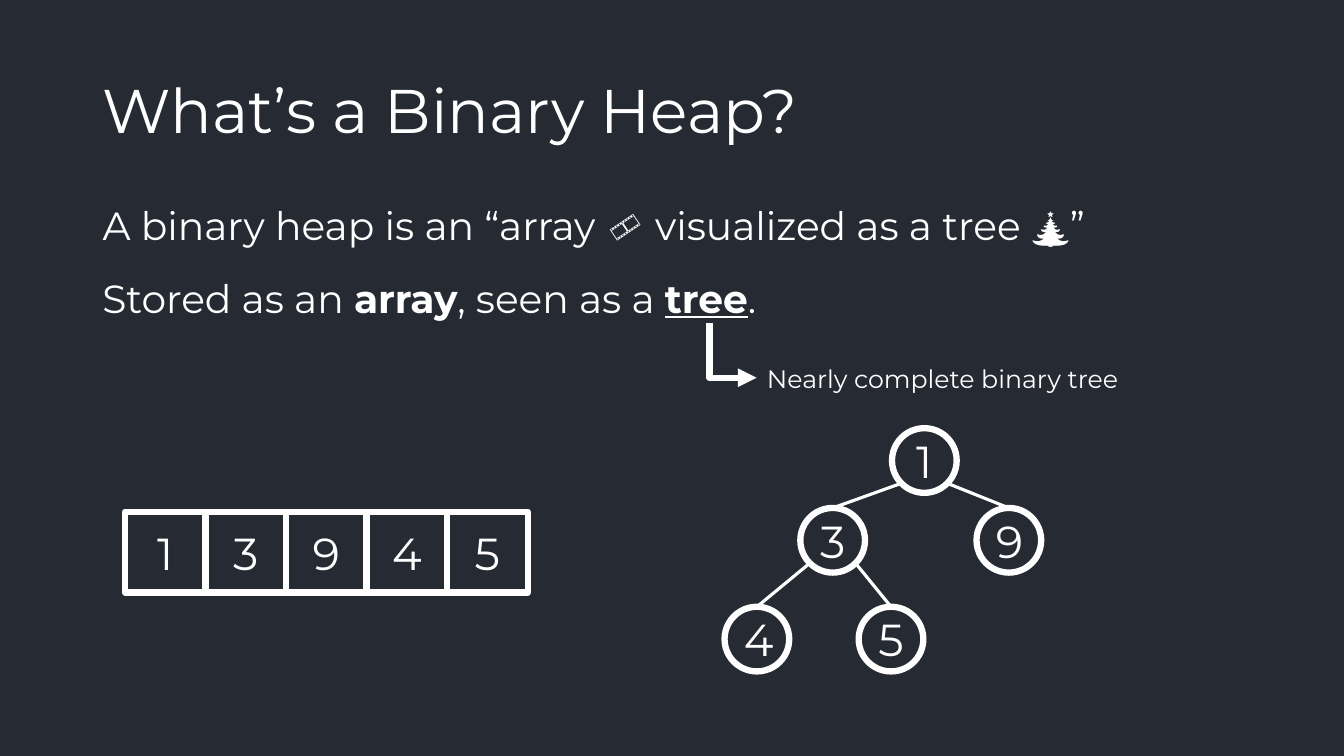
from lxml.etree import SubElement
from pptx import Presentation
from pptx.dml.color import RGBColor
from pptx.enum.shapes import MSO_CONNECTOR as Link, MSO_SHAPE as Form
from pptx.enum.text import MSO_ANCHOR as Anchor, MSO_AUTO_SIZE as Fit, PP_ALIGN as Align
from pptx.oxml.ns import qn
from pptx.util import Cm, Pt

FONT = "Montserrat"
WHITE = "FFFFFF"
DARK = "262A33"
HEAP = [1, 3, 9, 4, 5]
# Left and top of each tree node, in heap order
SPOTS = [(22.48, 10.79), (20.17, 12.8), (24.61, 12.8), (18.26, 15.29), (21.64, 15.29)]
NODE = 1.63
CELL = 2.03


def color(code):
    return RGBColor.from_string(code)


def place(shape, left, top, width, height):
    shape.left, shape.top = Cm(left), Cm(top)
    shape.width, shape.height = Cm(width), Cm(height)


def style(run, size, bold=False, under=False):
    font = run.font
    font.name, font.size = FONT, Pt(size)
    font.bold, font.underline = bold, under
    font.color.rgb = color(WHITE)


def write(shape, parts, size, anchor=Anchor.TOP, align=Align.LEFT, gap=0, lead=1.0):
    """Fill a shape with one paragraph of (text, bold, underline) parts."""
    frame = shape.text_frame
    frame.word_wrap = True
    frame.auto_size = Fit.NONE
    frame.vertical_anchor = anchor
    para = frame.paragraphs[0]
    para.alignment = align
    para.line_spacing, para.space_before = lead, Pt(gap)
    for text, bold, under in parts:
        run = para.add_run()
        run.text = text
        style(run, size, bold, under)
    return para


def plain(text):
    return [(text, False, False)]


def label(slide, box, parts, size, **look):
    shape = slide.shapes.add_textbox(*map(Cm, box))
    write(shape, parts, size, **look)
    return shape


def digit(slide, form, left, top, side, value):
    """Draw one outlined cell or node with its number."""
    shape = slide.shapes.add_shape(form, Cm(left), Cm(top), Cm(side), Cm(side))
    shape.shadow.inherit = False
    shape.fill.background()
    shape.line.color.rgb = color(WHITE)
    shape.line.width = Pt(4.5)
    write(shape, plain(str(value)), 32, Anchor.MIDDLE, Align.CENTER)


def link(slide, kind, start, end, width):
    line = slide.shapes.add_connector(kind, *map(Cm, (*start, *end)))
    line.line.color.rgb = color(WHITE)
    line.line.width = Pt(width)
    SubElement(line._element.spPr, qn("a:effectLst"))
    return line


def arrow(slide):
    """Draw the arrow that goes down from the word and then right."""
    line = link(slide, Link.ELBOW, (19.16, 8.24), (17.79, 9.43), 4.5)
    props = line._element.spPr
    props.find(qn("a:xfrm")).set("rot", "16200000")
    bend = props.find(qn("a:prstGeom")).find(qn("a:avLst"))
    SubElement(bend, qn("a:gd"), name="adj1", fmla="val 100000")
    SubElement(props.find(qn("a:ln")), qn("a:tailEnd"), type="triangle")


def array(slide):
    for i, value in enumerate(HEAP):
        digit(slide, Form.RECTANGLE, 3.15 + i * CELL, 12.9, CELL, value)


def tree(slide):
    for (left, top), value in zip(SPOTS, HEAP):
        digit(slide, Form.OVAL, left, top, NODE, value)
    low = NODE * 0.85
    for i, (left, top) in enumerate(SPOTS[1:], 1):
        x, y = SPOTS[(i - 1) // 2]
        side = NODE - low if i % 2 else low
        link(slide, Link.STRAIGHT, (x + side, y + low), (left + NODE / 2, top), 2.25)


def main():
    deck = Presentation()
    deck.slide_width, deck.slide_height = Cm(33.87), Cm(19.05)
    slide = deck.slides.add_slide(deck.slide_layouts[1])
    back = slide.background.fill
    back.solid()
    back.fore_color.rgb = color(DARK)

    title, body = slide.placeholders
    place(title, 2.33, 1.02, 29.21, 3.68)
    write(title, plain("What’s a Binary Heap?"), 44, Anchor.MIDDLE, lead=0.9)
    place(body, 2.33, 5.08, 29.21, 1.45)
    para = write(body, plain("A binary heap is an “array 🎞️ visualized as a tree 🎄”"),
                 28, gap=10, lead=0.9)
    props = para._p.get_or_add_pPr()
    props.set("marL", "0")
    props.set("indent", "0")
    SubElement(props, qn("a:buNone"))

    stored = [("Stored as an ", False, False), ("array", True, False),
              (", seen as a ", False, False), ("tree", True, True), (".", False, False)]
    label(slide, (2.33, 6.91, 29.21, 1.45), stored, 28, gap=10, lead=0.9)
    arrow(slide)
    note = label(slide, (19.08, 9.02, 9.5, 1.02), plain("Nearly complete binary tree"), 18)
    note.text_frame.word_wrap = False
    array(slide)
    tree(slide)
    deck.save("out.pptx")


if __name__ == "__main__":
    main()
